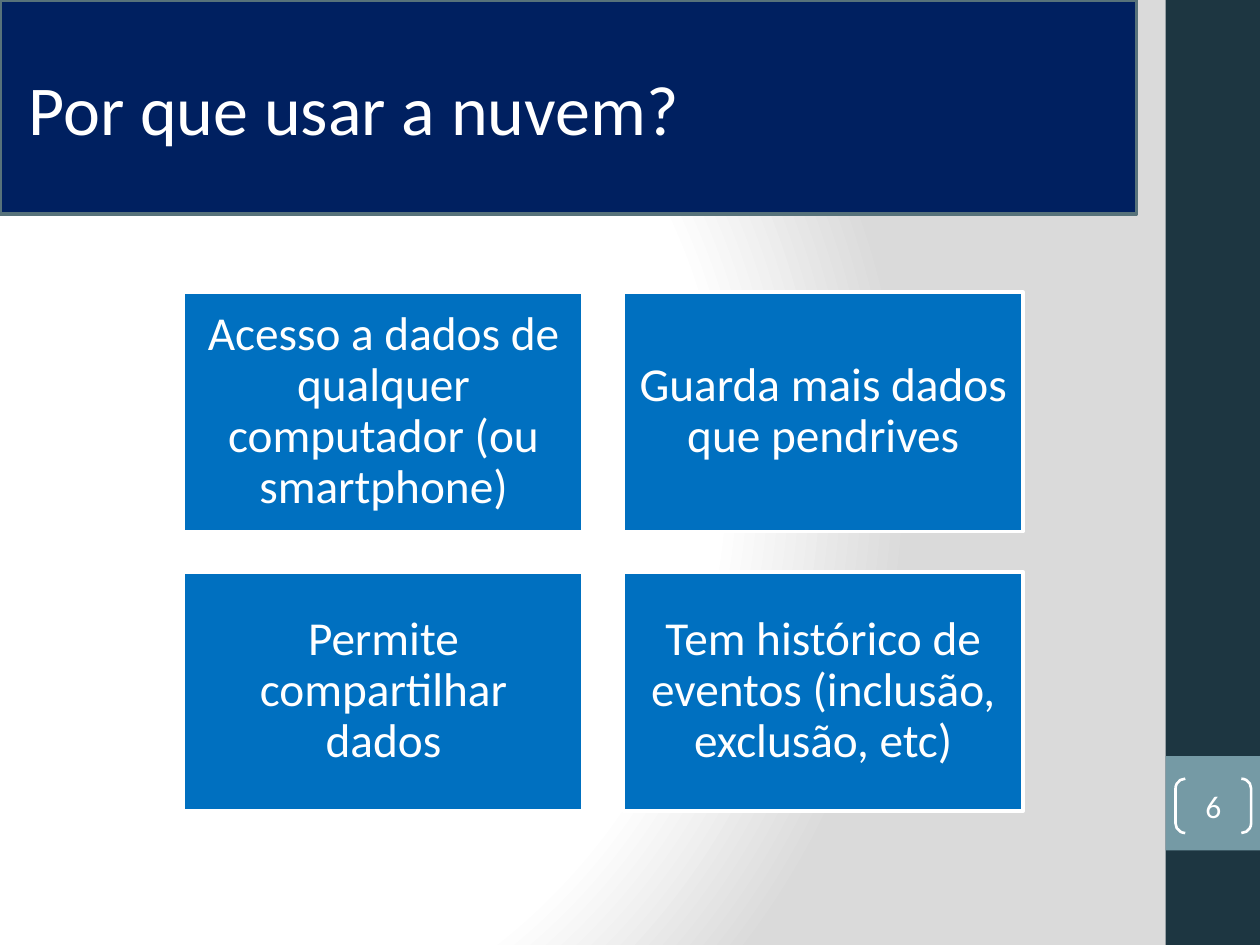
from dataclasses import dataclass

from lxml import etree
from pptx import Presentation
from pptx.dml.color import RGBColor
from pptx.enum import shapes, text
from pptx.oxml import ns
from pptx.util import Pt


@dataclass(frozen=True)
class Theme:
    font: str = "Calibri"
    white: str = "FFFFFF"
    grey: str = "DADADA"
    rail: str = "1D3641"
    badge: str = "759AA5"
    navy: str = "002060"
    edge: str = "57727A"
    tile: str = "0070C0"
    title: int = 40
    body: int = 27
    small: int = 18


THEME = Theme()
KIND = shapes.MSO_SHAPE
ALIGN = text.PP_ALIGN

REASONS = [
    "Acesso a dados de qualquer computador (ou smartphone)",
    "Guarda mais dados que pendrives",
    "Permite compartilhar dados",
    "Tem histórico de eventos (inclusão, exclusão, etc)",
]


def paint_back(slide):
    """Fill the background with a radial fade from white to grey."""
    slide.background.fill.gradient()
    grad = slide.element.find(".//" + ns.qn("a:gradFill"))
    for child in list(grad):
        grad.remove(child)

    def add(parent, tag, **attrs):
        return etree.SubElement(parent, ns.qn(tag), attrs)

    stops = add(grad, "a:gsLst")
    for pos, color in ((0, THEME.white), (75, THEME.white), (100, THEME.grey)):
        stop = add(stops, "a:gs", pos=str(pos * 1000))
        add(stop, "a:srgbClr", val=color)
    fade = add(grad, "a:path", path="circle")
    add(fade, "a:fillToRect", l="20000", t="50000", r="100000", b="50000")


def add_box(slide, box, fill=None, line=None, width=2, kind=KIND.RECTANGLE):
    shape = slide.shapes.add_shape(kind, *(Pt(n) for n in box))
    shape.shadow.inherit = False
    if fill:
        shape.fill.solid()
        shape.fill.fore_color.rgb = RGBColor.from_string(fill)
    else:
        shape.fill.background()
    if line:
        shape.line.color.rgb = RGBColor.from_string(line)
        shape.line.width = Pt(width)
    else:
        shape.line.fill.background()
    return shape


def write(shape, words, size, align, pads, space=1.0):
    """Put one paragraph, centred in height, inside a shape."""
    frame = shape.text_frame
    frame.word_wrap = True
    frame.vertical_anchor = text.MSO_ANCHOR.MIDDLE
    frame.margin_left, frame.margin_top, frame.margin_right, frame.margin_bottom = (
        Pt(n) for n in pads)
    para = frame.paragraphs[0]
    para.text = words
    para.alignment = align
    para.line_spacing = space
    para.font.name = THEME.font
    para.font.size = Pt(size)
    para.font.color.rgb = RGBColor.from_string(THEME.white)


def add_rail(slide, number):
    """Draw the right-hand band with the page number in brackets."""
    add_box(slide, (666, 0, 54, 540), THEME.rail)
    add_box(slide, (666, 432, 54, 54), THEME.badge)
    mark = add_box(slide, (671.75, 445, 43.2, 31), line=THEME.white,
                   width=1.5, kind=KIND.DOUBLE_BRACKET)
    mark.adjustments[0] = 0.18
    write(mark, number, THEME.small, ALIGN.CENTER, (0, 0, 0, 0))


def add_title(slide, words):
    bar = add_box(slide, (0, 0, 649.5, 122.4), THEME.navy, THEME.edge)
    write(bar, words, THEME.title, ALIGN.LEFT, (16.25, 3.6, 7.2, 3.6))


def add_tiles(slide, items, cols=2):
    left, top, wide, high = 105, 167, 228.3, 136.8
    gap_x, gap_y = 23, 23
    for i, words in enumerate(items):
        row, col = divmod(i, cols)
        box = (left + col * (wide + gap_x), top + row * (high + gap_y), wide, high)
        tile = add_box(slide, box, THEME.tile, THEME.white)
        write(tile, words, THEME.body, ALIGN.CENTER, (8, 8, 8, 8), 0.9)


def main():
    deck = Presentation()
    deck.slide_width, deck.slide_height = Pt(720), Pt(540)
    slide = deck.slides.add_slide(deck.slide_layouts[6])
    paint_back(slide)
    add_rail(slide, "6")
    add_title(slide, "Por que usar a nuvem?")
    add_tiles(slide, REASONS)
    deck.save("out.pptx")


if __name__ == "__main__":
    main()
